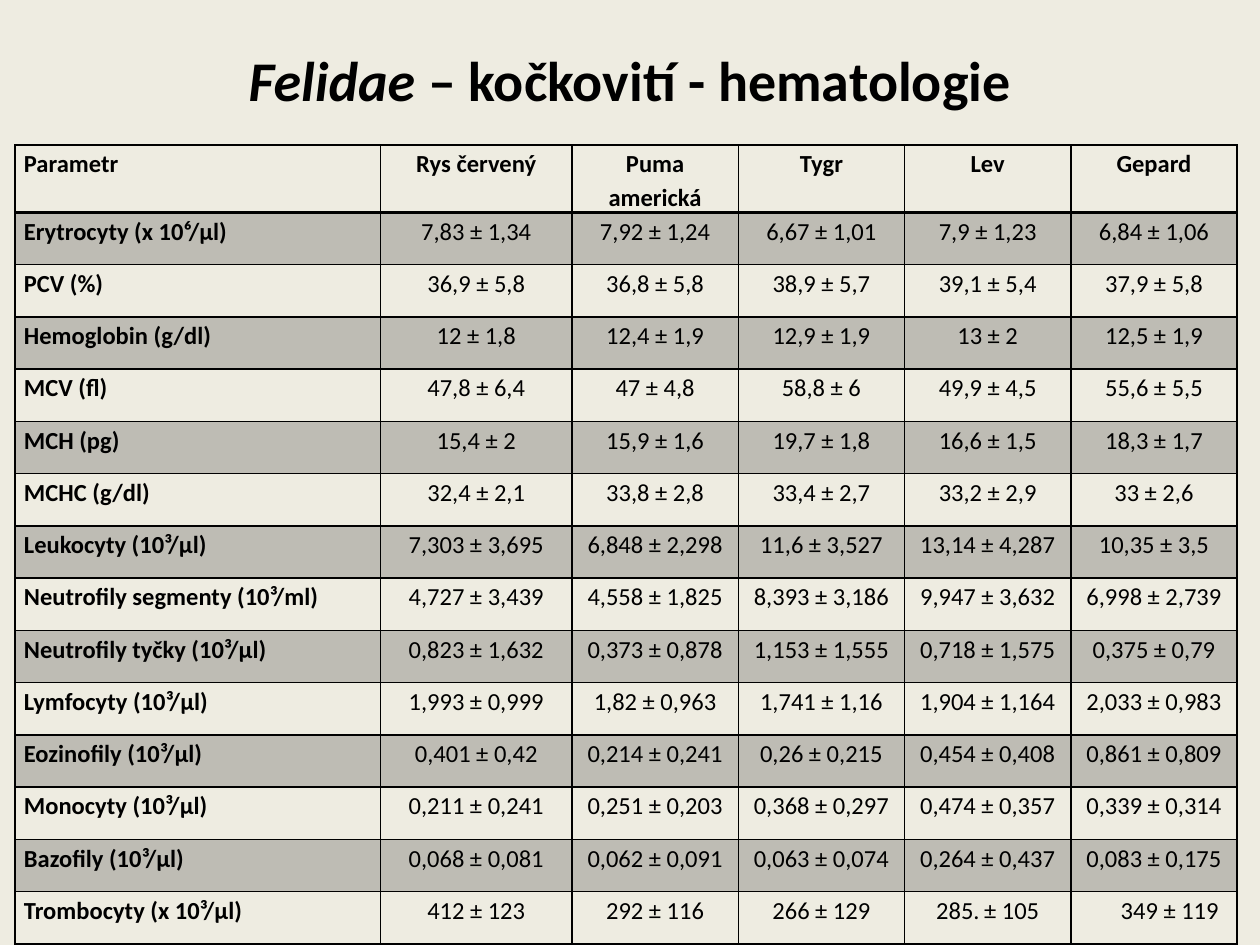
import pptx
import pptx.util
import pptx.dml.color
import pptx.enum.text
import pptx.oxml.ns
from lxml import etree

# Content
title = [("Felidae", True), (" – kočkovití - hematologie", False)]
head = ("Parametr", "Rys červený", "Puma americká", "Tygr", "Lev", "Gepard")
body = [
    ("Erytrocyty (x 10⁶/μl)", "7,83 ± 1,34", "7,92 ± 1,24", "6,67 ± 1,01", "7,9 ± 1,23", "6,84 ± 1,06"),
    ("PCV (%)", "36,9 ± 5,8", "36,8 ± 5,8", "38,9 ± 5,7", "39,1 ± 5,4", "37,9 ± 5,8"),
    ("Hemoglobin (g/dl)", "12 ± 1,8", "12,4 ± 1,9", "12,9 ± 1,9", "13 ± 2", "12,5 ± 1,9"),
    ("MCV (fl)", "47,8 ± 6,4", "47 ± 4,8", "58,8 ± 6", "49,9 ± 4,5", "55,6 ± 5,5"),
    ("MCH (pg)", "15,4 ± 2", "15,9 ± 1,6", "19,7 ± 1,8", "16,6 ± 1,5", "18,3 ± 1,7"),
    ("MCHC (g/dl)", "32,4 ± 2,1", "33,8 ± 2,8", "33,4 ± 2,7", "33,2 ± 2,9", "33 ± 2,6"),
    ("Leukocyty (10³/μl)", "7,303 ± 3,695", "6,848 ± 2,298", "11,6 ± 3,527", "13,14 ± 4,287", "10,35 ± 3,5"),
    ("Neutrofily segmenty (10³/ml)", "4,727 ± 3,439", "4,558 ± 1,825", "8,393 ± 3,186", "9,947 ± 3,632", "6,998 ± 2,739"),
    ("Neutrofily tyčky (10³/μl)", "0,823 ± 1,632", "0,373 ± 0,878", "1,153 ± 1,555", "0,718 ± 1,575", "0,375 ± 0,79"),
    ("Lymfocyty (10³/μl)", "1,993 ± 0,999", "1,82 ± 0,963", "1,741 ± 1,16", "1,904 ± 1,164", "2,033 ± 0,983"),
    ("Eozinofily (10³/μl)", "0,401 ± 0,42", "0,214 ± 0,241", "0,26 ± 0,215", "0,454 ± 0,408", "0,861 ± 0,809"),
    ("Monocyty (10³/μl)", "0,211 ± 0,241", "0,251 ± 0,203", "0,368 ± 0,297", "0,474 ± 0,357", "0,339 ± 0,314"),
    ("Bazofily (10³/μl)", "0,068 ± 0,081", "0,062 ± 0,091", "0,063 ± 0,074", "0,264 ± 0,437", "0,083 ± 0,175"),
    ("Trombocyty (x 10³/μl)", "412 ± 123", "292 ± 116", "266 ± 129", "± 105", "349 ± 119"),
]
rows = [head] + body
last = len(rows) - 1
# Indented cells: (row, column) -> left margin, first line, list start
indents = {(last, 4): (0.38, -0.38, 285), (last, 5): (0.25, 0, None)}

# Theme and grid
theme = dict(font="Calibri", ink="000000", back="EEECE1", shade=20,
             title=32, cell=14, thin=1, thick=2)
wide, high = 10, 7.5
left, top = 0.12, 1.15
cols = [2.9, 1.52] + [1.32] * 4
step = pptx.util.Pt(29.85)
inch = pptx.util.Inches
align = pptx.enum.text.PP_ALIGN
qn = pptx.oxml.ns.qn


def color(key):
    return pptx.dml.color.RGBColor.from_string(theme[key])


def write(para, text, size, bold, slant=False):
    run = para.add_run()
    run.text = text
    font = run.font
    font.name, font.size = theme["font"], pptx.util.Pt(theme[size])
    font.bold, font.italic = bold, slant
    font.color.rgb = color("ink")


def indent(para, margin, first, start):
    props = para._p.get_or_add_pPr()
    props.set("marL", str(inch(margin)))
    props.set("indent", str(inch(first)))
    if start:
        etree.SubElement(props, qn("a:buAutoNum"), type="arabicPeriod", startAt=str(start))


def shade(cell, on):
    if not on:
        cell.fill.background()
        return
    cell.fill.solid()
    cell.fill.fore_color.rgb = color("ink")
    tone = cell._tc.tcPr.find(".//" + qn("a:srgbClr"))
    etree.SubElement(tone, qn("a:alpha"), val=str(theme["shade"] * 1000))


def border(cell, row):
    sides = {"L": "thin", "R": "thin",
             "T": "thick" if row == 1 else "thin",
             "B": "thick" if row == 0 else "thin"}
    for spot, (side, key) in enumerate(sides.items()):
        line = etree.Element(qn("a:ln" + side), w=str(pptx.util.Pt(theme[key])))
        fill = etree.SubElement(line, qn("a:solidFill"))
        etree.SubElement(fill, qn("a:srgbClr"), val=theme["ink"])
        cell._tc.tcPr.insert(spot, line)


# Slide
deck = pptx.Presentation()
deck.slide_width, deck.slide_height = inch(wide), inch(high)
slide = deck.slides.add_slide(deck.slide_layouts[6])
slide.background.fill.solid()
slide.background.fill.fore_color.rgb = color("back")

# Title
box = slide.shapes.add_textbox(inch(0.05 * wide), 0, inch(0.9 * wide), inch(high / 6))
frame = box.text_frame
frame.word_wrap = True
frame.vertical_anchor = pptx.enum.text.MSO_ANCHOR.MIDDLE
para = frame.paragraphs[0]
para.alignment = align.CENTER
for text, slant in title:
    write(para, text, "title", True, slant)

# Table
table = slide.shapes.add_table(len(rows), len(cols), inch(left), inch(top),
                               inch(sum(cols)), step * len(rows)).table
table.first_row = table.horz_banding = False
for col, width in zip(table.columns, cols):
    col.width = inch(width)
for r, row in enumerate(rows):
    table.rows[r].height = step
    for c, text in enumerate(row):
        cell = table.cell(r, c)
        cell.margin_left = cell.margin_right = inch(0.07)
        cell.margin_top = cell.margin_bottom = 0
        para = cell.text_frame.paragraphs[0]
        if (r, c) in indents:
            indent(para, *indents[r, c])
        para.alignment = align.CENTER if c else align.LEFT
        para.line_spacing = 1.15
        para.space_after = pptx.util.Pt(8)
        write(para, text, "cell", r == 0 or c == 0)
        shade(cell, r % 2 == 1)
        border(cell, r)

deck.save("out.pptx")
